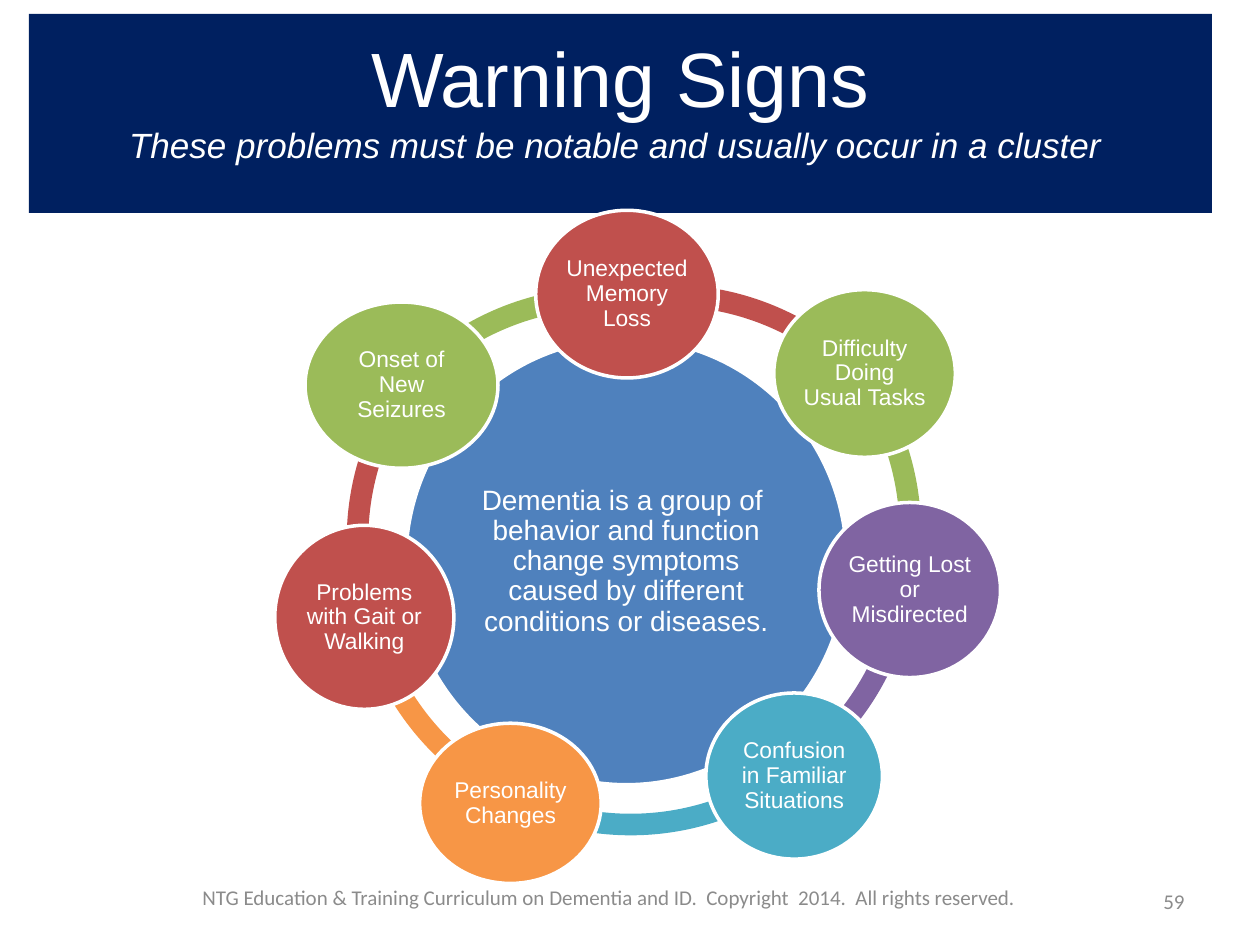
from collections import namedtuple
from dataclasses import dataclass

from pptx import Presentation
from pptx import util as u
from pptx.dml.color import RGBColor
from pptx.enum import shapes, text


@dataclass(frozen=True)
class Theme:
    navy: str = "002060"
    white: str = "FFFFFF"
    grey: str = "8B8B8B"
    blue: str = "4F81BD"
    red: str = "C0504D"
    green: str = "9BBB59"
    purple: str = "8064A2"
    teal: str = "4BACC6"
    orange: str = "F79646"
    heading_font: str = "Arial"
    footer_font: str = "Calibri"
    title_size: int = 44
    subtitle_size: int = 20
    hub_size: int = 16
    sign_size: int = 13
    footer_size: int = 12
    outline: int = 2


THEME = Theme()
Box = namedtuple("Box", "left top width height")
Sign = namedtuple("Sign", "label color oval arc_at angles")

ARC_SIZE = 11.15
ARC_THICKNESS = 0.039
HUB = Box(2.64, 2.59, 8.89, 8.99)
HUB_TEXT = ("Dementia is a group of  behavior and function change symptoms "
            "caused by different conditions or diseases.")

# Clockwise from the top: each sign owns the arc leading to the next one.
# Positions are in cm within the diagram, angles in degrees.
SIGNS = [
    Sign("Unexpected Memory Loss", THEME.red,
         Box(5.26, 0, 3.68, 3.38), (2.36, 1.5), (261, 316.06)),
    Sign("Difficulty Doing Usual Tasks", THEME.green,
         Box(10.06, 1.6, 3.66, 3.38), (1.88, 0.91), (324.24, 12.33)),
    Sign("Getting Lost or Misdirected", THEME.purple,
         Box(10.97, 5.89, 3.66, 3.53), (1.8, 1.3), (8.08, 55.62)),
    Sign("Confusion in Familiar Situations", THEME.teal,
         Box(8.69, 9.73, 3.56, 3.35), (1.6, 1.45), (53, 116.16)),
    Sign("Personality Changes", THEME.orange,
         Box(2.92, 10.34, 3.66, 3.23), (1.55, 1.42), (115.63, 167.3)),
    Sign("Problems with Gait or Walking", THEME.red,
         Box(0, 6.35, 3.61, 3.71), (1.45, 1.07), (163.41, 214.82)),
    Sign("Onset of New Seizures", THEME.green,
         Box(0.61, 1.85, 3.89, 3.35), (1.07, 1.55), (221.26, 274.59)),
]


def cm(box):
    return [u.Cm(v) for v in box]


def within(outer, inner):
    return Box(outer.left + inner.left, outer.top + inner.top,
               inner.width, inner.height)


def set_attrs(obj, values):
    for name, value in values.items():
        setattr(obj, name, value)


def paint(sp, color):
    sp.fill.solid()
    sp.fill.fore_color.rgb = RGBColor.from_string(color)


def add_run(p, words, font, size, color, italic=False):
    r = p.add_run()
    r.text = words
    set_attrs(r.font, {"name": font, "size": u.Pt(size), "italic": italic})
    r.font.color.rgb = RGBColor.from_string(color)


def format_frame(tf, inset=None):
    set_attrs(tf, {"word_wrap": True, "auto_size": text.MSO_AUTO_SIZE.NONE,
                   "vertical_anchor": text.MSO_ANCHOR.MIDDLE})
    if inset is not None:
        sides = ("left", "top", "right", "bottom")
        set_attrs(tf, {f"margin_{side}": u.Cm(inset) for side in sides})


def title_banner(s, box):
    sp = s.shapes.title
    set_attrs(sp, dict(zip(box._fields, cm(box))))
    paint(sp, THEME.navy)
    tf = sp.text_frame
    format_frame(tf)
    tf.margin_bottom = u.Cm(0.75)
    p = tf.paragraphs[0]
    p.alignment = text.PP_ALIGN.CENTER
    add_run(p, "Warning Signs", THEME.heading_font, THEME.title_size, THEME.white)
    p.add_line_break()
    add_run(p, "These problems must be notable and usually occur in a cluster ",
            THEME.heading_font, THEME.subtitle_size, THEME.white, italic=True)


def add_arc(group, box, color, angles):
    sp = group.shapes.add_shape(shapes.MSO_SHAPE.BLOCK_ARC, *cm(box))
    sp.shadow.inherit = False
    paint(sp, color)
    sp.line.fill.background()
    # Angles are stored in 60000ths of a degree, adjustments in 100000ths
    for i, angle in enumerate(angles):
        sp.adjustments[i] = angle * 0.6
    sp.adjustments[2] = ARC_THICKNESS


def add_oval(group, box, color, words, size):
    sp = group.shapes.add_shape(shapes.MSO_SHAPE.OVAL, *cm(box))
    sp.shadow.inherit = False
    paint(sp, color)
    sp.line.color.rgb = RGBColor.from_string(THEME.white)
    sp.line.width = u.Pt(THEME.outline)
    format_frame(sp.text_frame, inset=0.05)
    p = sp.text_frame.paragraphs[0]
    set_attrs(p, {"alignment": text.PP_ALIGN.CENTER, "line_spacing": 0.9})
    add_run(p, words, THEME.heading_font, size, THEME.white)


def sign_wheel(s, box):
    group = s.shapes.add_group_shape()
    # Ring of arcs behind everything
    for sign in reversed(SIGNS):
        arc = Box(*sign.arc_at, ARC_SIZE, ARC_SIZE)
        add_arc(group, within(box, arc), sign.color, sign.angles)
    # Hub, then the signs around it
    add_oval(group, within(box, HUB), THEME.blue, HUB_TEXT, THEME.hub_size)
    for sign in SIGNS:
        add_oval(group, within(box, sign.oval), sign.color, sign.label,
                 THEME.sign_size)


def footer_text(s, box, words, alignment):
    sp = s.shapes.add_textbox(*cm(box))
    format_frame(sp.text_frame)
    p = sp.text_frame.paragraphs[0]
    p.alignment = alignment
    add_run(p, words, THEME.footer_font, THEME.footer_size, THEME.grey)


def main():
    prs = Presentation()
    set_attrs(prs, {"slide_width": u.Cm(25.4), "slide_height": u.Cm(19.05)})
    s = prs.slides.add_slide(prs.slide_layouts[5])
    title_banner(s, Box(0.58, 0.28, 23.85, 4.01))
    sign_wheel(s, Box(5.54, 4.24, 14.63, 13.57))
    footer_text(s, Box(1.47, 17.58, 21.62, 1.02),
                "NTG Education & Training Curriculum on Dementia and ID.  "
                "Copyright  2014.  All rights reserved.",
                text.PP_ALIGN.CENTER)
    footer_text(s, Box(18.21, 17.65, 5.92, 1.02), "59", text.PP_ALIGN.RIGHT)
    prs.save("out.pptx")


if __name__ == "__main__":
    main()
